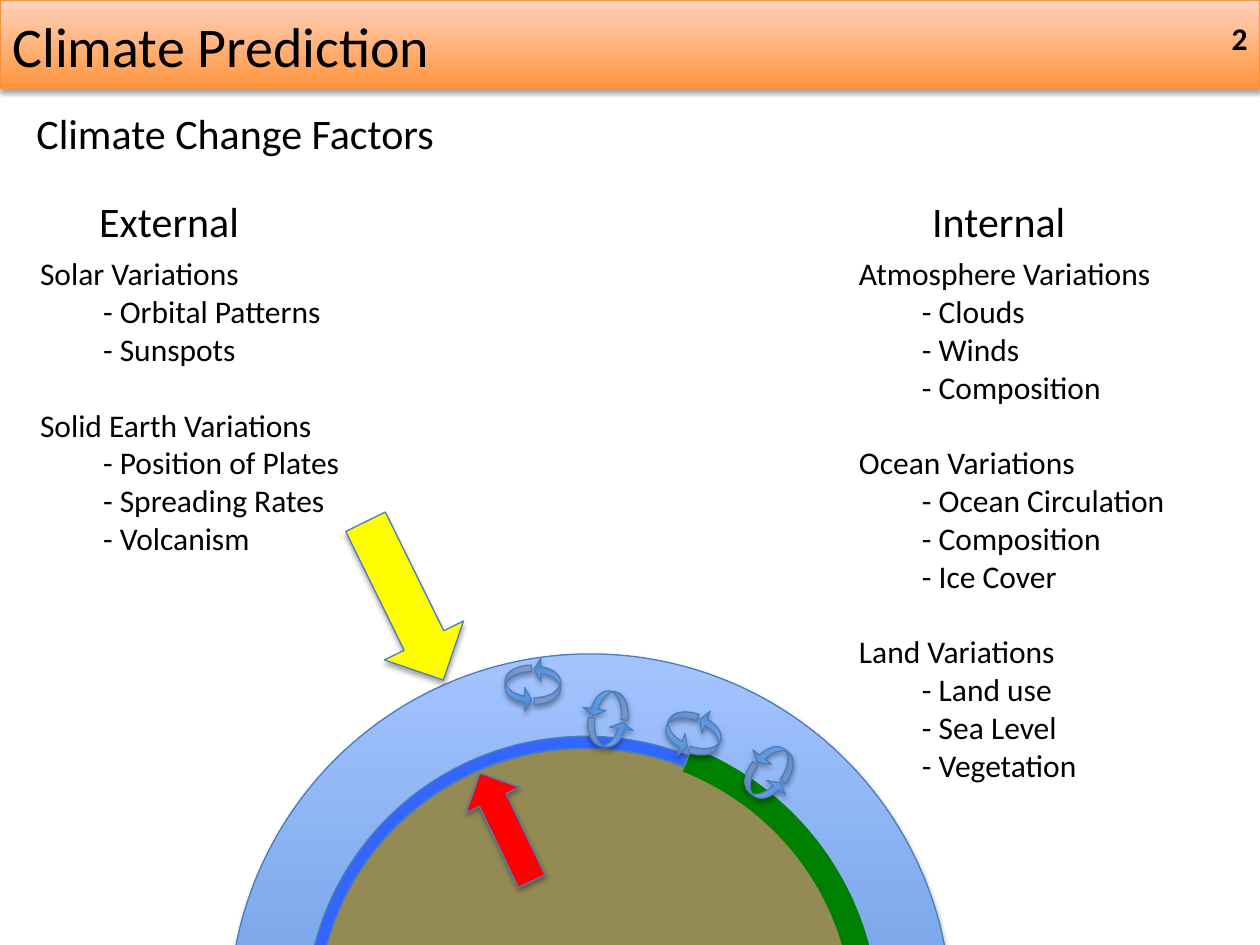
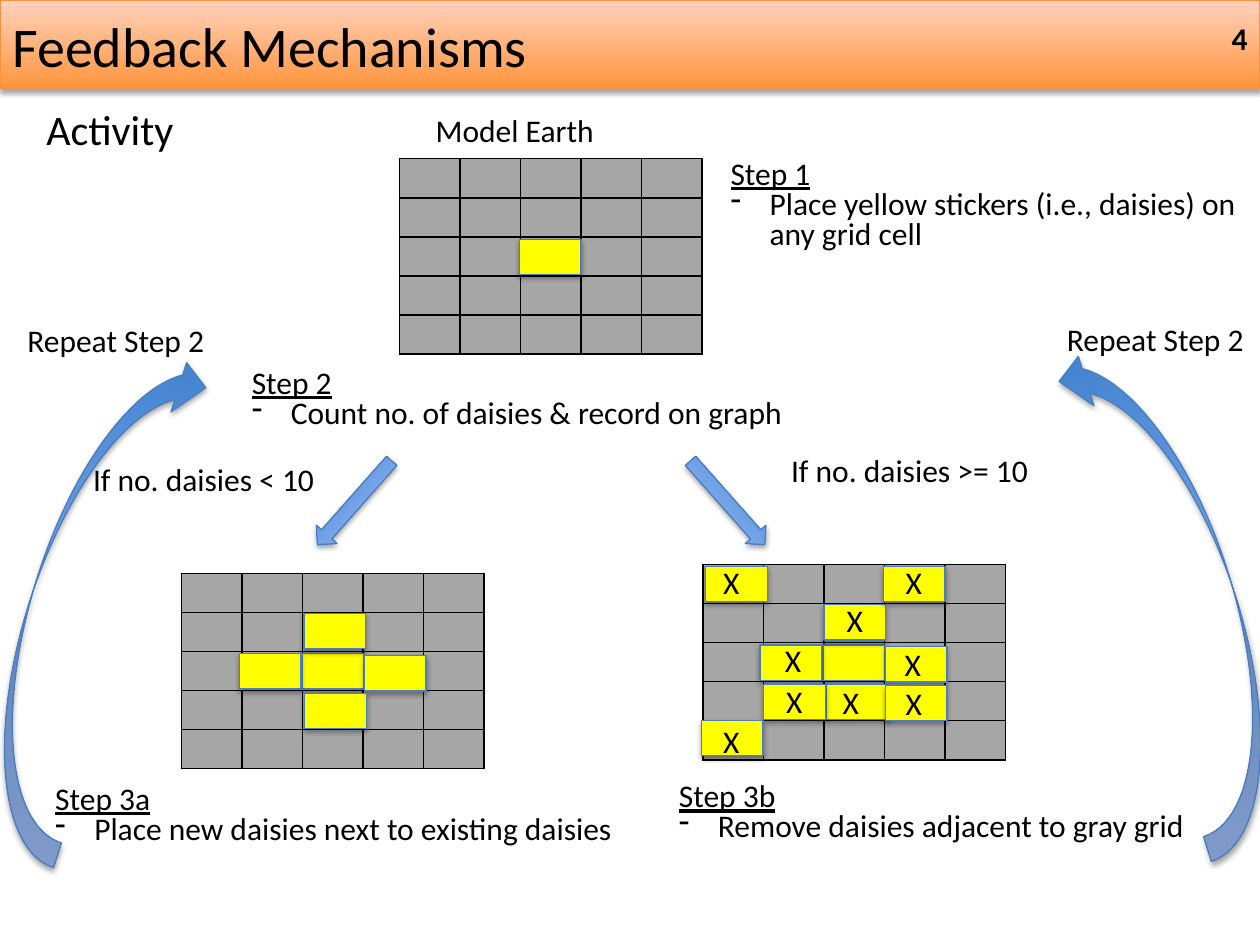
from math import cos, radians, sin

from lxml.etree import SubElement
from pptx import Presentation
from pptx.dml.color import RGBColor
from pptx.enum.shapes import MSO_SHAPE
from pptx.enum.text import MSO_ANCHOR, MSO_AUTO_SIZE, PP_ALIGN
from pptx.oxml.ns import qn
from pptx.util import Pt

FONT = "Calibri"
COLORS = {
    "text": "000000",
    "band_dark": "FF953E",
    "band_light": "FFD2BD",
    "band_line": "F69240",
    "blue_dark": "3F80CE",
    "blue_light": "A4C4FF",
    "blue_line": "4B7EBC",
    "ground": "948A54",
    "land": "008000",
    "ocean": "3366FF",
    "yellow": "FFFF00",
    "red": "FF0000",
    "grid_cell": "A6A6A6",
}
BAND = ("band_dark", "band_light")
BLUE = ("blue_dark", "blue_light")

GRID_COUNT = 5
CELL_WIDTH, CELL_HEIGHT = 34.56, 22.32
DAISY_WIDTH, DAISY_HEIGHT = 35.3, 20.2
CYCLE_WIDTH, CYCLE_HEIGHT = 15.1, 26.6


def color(name):
    return RGBColor.from_string(COLORS[name])


def add_shadow(shape):
    shape.shadow.inherit = False
    effects = shape.element.spPr.find(qn("a:effectLst"))
    shadow = SubElement(effects, qn("a:outerShdw"), blurRad=str(Pt(3.1)),
                        dist=str(Pt(1.8)), dir="5400000", rotWithShape="0")
    shade = SubElement(shadow, qn("a:srgbClr"), val=COLORS["text"])
    SubElement(shade, qn("a:alpha"), val="35000")


def draw(slide, kind, box, fill, line="blue_line", rotation=0, flip=False,
         adjustments=(), shadow=True):
    """Add a preset shape; fill is a colour name or a (bottom, top) pair."""
    shape = slide.shapes.add_shape(kind, *map(Pt, box))
    shape.rotation = rotation
    for index, value in enumerate(adjustments):
        shape.adjustments[index] = value
    if isinstance(fill, tuple):
        shape.fill.gradient()
        shape.fill.gradient_angle = 90
        for stop, name in zip(shape.fill.gradient_stops, fill):
            stop.color.rgb = color(name)
    else:
        shape.fill.solid()
        shape.fill.fore_color.rgb = color(fill)
    if line:
        shape.line.color.rgb = color(line)
        shape.line.width = Pt(0.75)
    else:
        shape.line.fill.background()
    if flip:
        shape.element.spPr.find(qn("a:xfrm")).set("flipH", "1")
    if shadow:
        add_shadow(shape)
    else:
        shape.shadow.inherit = False
    return shape


def add_text(slide, box, lines, size=18, wrap=False, spacing=None):
    text_box = slide.shapes.add_textbox(*map(Pt, box))
    frame = text_box.text_frame
    frame.word_wrap = wrap
    frame.auto_size = MSO_AUTO_SIZE.SHAPE_TO_FIT_TEXT
    frame.text = "\n".join(lines)
    for paragraph in frame.paragraphs:
        paragraph.font.name = FONT
        paragraph.font.size = Pt(size)
        paragraph.font.color.rgb = color("text")
        if spacing:
            paragraph.line_spacing = spacing
    return frame


def indent(paragraph, margin, first_line=0):
    properties = paragraph._p.get_or_add_pPr()
    properties.set("marL", str(Pt(margin)))
    properties.set("indent", str(Pt(first_line)))
    return properties


def add_header(slide, title, title_width, number):
    draw(slide, MSO_SHAPE.RECTANGLE, (0, 0, 720, 50.4), BAND, "band_line")
    number_frame = add_text(slide, (552.25, 7.2, 167.75, 28.8), [number], wrap=True)
    number_frame.auto_size = MSO_AUTO_SIZE.NONE
    number_frame.vertical_anchor = MSO_ANCHOR.MIDDLE
    number_frame.paragraphs[0].alignment = PP_ALIGN.RIGHT
    number_frame.paragraphs[0].font.bold = True
    add_text(slide, (0, 2.9, title_width, 46), [title], 32)


def add_cycle(slide, center_x, center_y, rotation):
    """Two curved arrows chasing each other around a centre."""
    for turn in (rotation, rotation + 180):
        angle = radians(turn)
        x = center_x - 8.3 * cos(angle) - 2.1 * sin(angle)
        y = center_y - 8.3 * sin(angle) + 2.1 * cos(angle)
        box = (x - CYCLE_WIDTH / 2, y - CYCLE_HEIGHT / 2, CYCLE_WIDTH, CYCLE_HEIGHT)
        draw(slide, MSO_SHAPE.CURVED_LEFT_ARROW, box, BLUE, rotation=turn,
             flip=True, adjustments=(0.25, 0.896, 0.25))


def add_earth(slide, left, top, size):
    draw(slide, MSO_SHAPE.OVAL, (left, top, size, size), BLUE)
    draw(slide, MSO_SHAPE.OVAL, (left + 49.7, top + 54, 308.2, 308.2), "ground")
    draw(slide, MSO_SHAPE.BLOCK_ARC, (left + 37.4, top + 40.3, 332.6, 335.5),
         "land", None, 111.5, adjustments=(108, 215.8, 0.045), shadow=False)
    draw(slide, MSO_SHAPE.BLOCK_ARC, (left + 44.6, top + 46.1, 319.7, 321.8),
         "ocean", rotation=291.5, adjustments=(108, 215.81, 0.021), shadow=False)
    for x, y, rotation in ((216.4, 37.1, 98.3), (173.5, 17.6, 0),
                           (308.5, 67.7, 127.5), (265.3, 45.4, 20.1)):
        add_cycle(slide, left + x, top + y, rotation)


def add_factors(slide, box, heading, heading_box, groups):
    """A heading above groups of factors, each with indented examples."""
    left, top, width, height = box
    x, heading_width = heading_box
    add_text(slide, (left + x, top - 33.8, heading_width, 36), [heading], 24)
    lines = [line for name, items in groups
             for line in (name, *(f"- {item}" for item in items))]
    frame = add_text(slide, (left, top, width, height), lines)
    for index, paragraph in enumerate(frame.paragraphs):
        if paragraph.text.startswith("- "):
            indent(paragraph, 36)
        elif index:
            paragraph.space_before = Pt(21.6)


def add_grid(slide, left, top):
    width, height = GRID_COUNT * CELL_WIDTH, GRID_COUNT * CELL_HEIGHT
    table = slide.shapes.add_table(GRID_COUNT, GRID_COUNT, Pt(left), Pt(top),
                                   Pt(width), Pt(height)).table
    for column in table.columns:
        column.width = Pt(CELL_WIDTH)
    for row in table.rows:
        row.height = Pt(CELL_HEIGHT)
    for cell in table.iter_cells():
        cell.margin_top = cell.margin_bottom = 0
        properties = cell._tc.get_or_add_tcPr()
        for side in ("lnL", "lnR", "lnT", "lnB"):
            border = SubElement(properties, qn(f"a:{side}"), w=str(Pt(1)))
            fill = SubElement(border, qn("a:solidFill"))
            SubElement(fill, qn("a:srgbClr"), val=COLORS["text"])
        cell.fill.solid()
        cell.fill.fore_color.rgb = color("grid_cell")


def add_daisy_grid(slide, left, top, daisies, marks=()):
    """A grid with daisies and X marks at offsets from its corner."""
    add_grid(slide, left, top)
    for x, y in daisies:
        draw(slide, MSO_SHAPE.RECTANGLE,
             (left + x, top + y, DAISY_WIDTH, DAISY_HEIGHT), "yellow")
    for x, y in marks:
        add_text(slide, (left + x, top + y, 23.8, 28.8), ["X"])


def add_step(slide, box, name, instruction):
    frame = add_text(slide, box, [name, instruction], wrap=True, spacing=0.8)
    heading, bullet = frame.paragraphs
    heading.font.underline = True
    properties = indent(bullet, 22.3, -22.3)
    mark = properties.makeelement(qn("a:buChar"), {"char": "-"})
    properties.find(qn("a:defRPr")).addprevious(mark)


def build_climate_slide(slide):
    add_header(slide, "Climate Prediction", 256.3, "2")
    add_text(slide, (13.7, 61.2, 246.2, 33.8), ["Climate Change Factors"], 24, spacing=0.9)
    add_earth(slide, 131, 373.7, 412.6)
    add_factors(slide, (15.8, 141.8, 187.9, 181.4), "External", (33.8, 95), [
        ("Solar Variations", ["Orbital Patterns", "Sunspots"]),
        ("Solid Earth Variations", ["Position of Plates", "Spreading Rates", "Volcanism"]),
    ])
    add_factors(slide, (483.8, 141.8, 191.5, 312.5), "Internal", (41.8, 92.2), [
        ("Atmosphere Variations", ["Clouds", "Winds", "Composition"]),
        ("Ocean Variations", ["Ocean Circulation", "Composition", "Ice Cover"]),
        ("Land Variations", ["Land use", "Sea Level", "Vegetation"]),
    ])
    draw(slide, MSO_SHAPE.RIGHT_ARROW, (180.7, 318.2, 100.8, 50.4), "yellow", rotation=63.8)
    draw(slide, MSO_SHAPE.RIGHT_ARROW, (254.9, 455.8, 68.4, 33.8), "red", rotation=244.4)


def build_feedback_slide(slide):
    add_header(slide, "Feedback Mechanisms", 311.8, "4")
    add_text(slide, (19.4, 59, 88.6, 33.8), ["Activity"], 24, spacing=0.9)

    add_daisy_grid(slide, 228.25, 90.7, [(68.5, 46)])
    add_daisy_grid(slide, 103.7, 327.6,
                   [(69, 46), (70, 23), (104.5, 47), (70.5, 68.5), (33, 46)])
    add_daisy_grid(
        slide, 401.8, 322.6,
        [(68.5, 46), (69, 23), (104, 47), (70.5, 68.5), (32.5, 46),
         (103, 1), (34.5, 68.5), (1.5, 1), (104, 69), (-1, 89)],
        [(108.7, -4.3), (4.3, -4.3), (75, 17.3), (39.6, 40.3), (108, 42.5),
         (108.7, 64.8), (72.7, 64), (40.3, 63.4), (4.3, 86.4)])

    for box, name, instruction in (
        ((410.4, 88.6, 305.3, 60.5), "Step 1",
         "Place yellow stickers (i.e., daisies) on any grid cell"),
        ((136.8, 208.1, 360, 43.2), "Step 2", "Count no. of daisies & record on graph"),
        ((24.5, 445.7, 333.4, 60.5), "Step 3a", "Place new daisies next to existing daisies"),
        ((380.9, 444.2, 333.4, 60.5), "Step 3b", "Remove daisies adjacent to gray grid"),
    ):
        add_step(slide, box, name, instruction)

    for left, rotation, flip in ((170.6, 131.5, False), (383.8, 228.5, True)):
        draw(slide, MSO_SHAPE.RIGHT_ARROW, (left, 279.4, 64, 15.8), BLUE,
             rotation=rotation, flip=flip)
    for left, top, rotation, flip in ((645.1, 187.9, 162.4, False),
                                      (18.7, 191.5, 197.6, True)):
        draw(slide, MSO_SHAPE.CURVED_RIGHT_ARROW, (left, top, 59, 302.4), BLUE,
             rotation=rotation, flip=flip)

    for left, top, width, label in (
        (241.9, 59.8, 105.8, "Model Earth"),
        (46.1, 259.2, 141.8, "If no. daisies < 10"),
        (445, 254.2, 151.2, "If no. daisies >= 10"),
        (602.6, 179.3, 117.4, "Repeat Step 2"),
        (8.6, 180, 117.4, "Repeat Step 2"),
    ):
        add_text(slide, (left, top, width, 28.8), [label])


def main():
    presentation = Presentation()
    presentation.slide_width, presentation.slide_height = Pt(720), Pt(540)
    for build in (build_climate_slide, build_feedback_slide):
        build(presentation.slides.add_slide(presentation.slide_layouts[6]))
    presentation.save("out.pptx")


if __name__ == "__main__":
    main()
